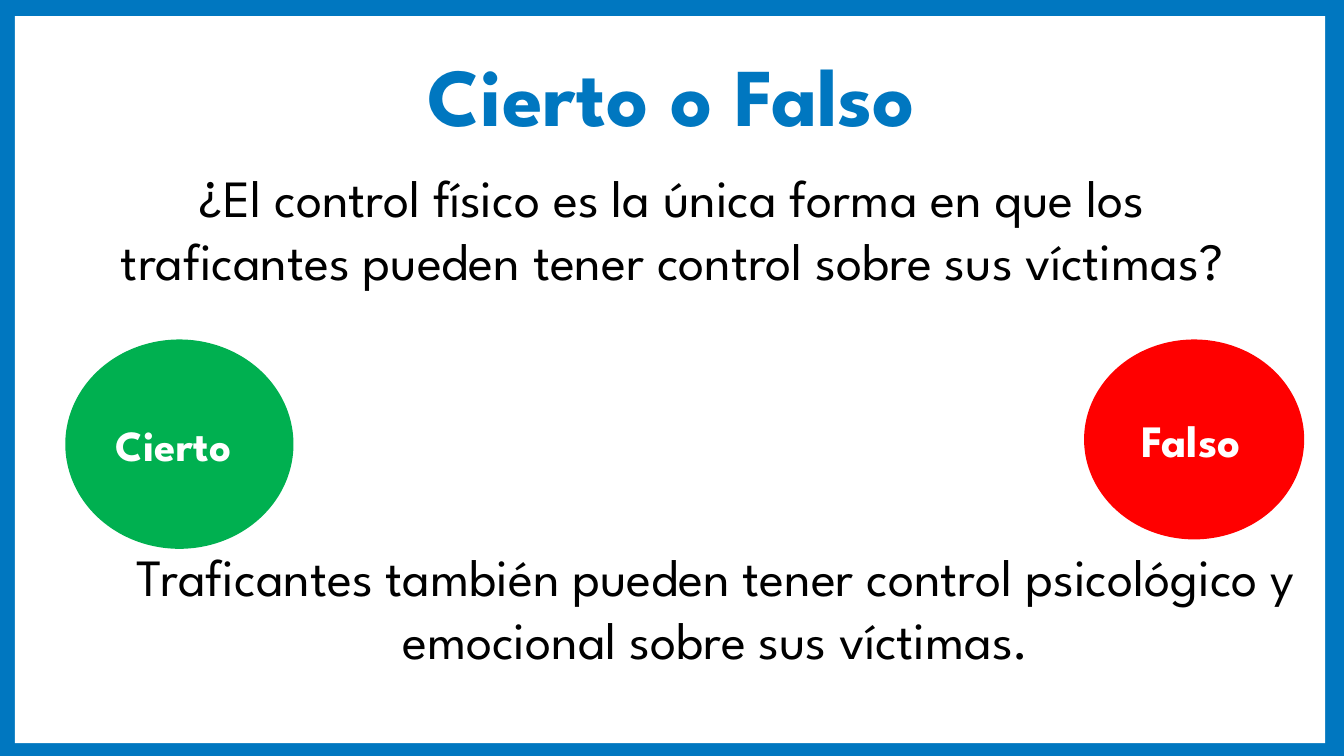
from lxml import etree
from pptx import Presentation
from pptx.dml.color import RGBColor
from pptx.enum.shapes import MSO_SHAPE
from pptx.enum.text import MSO_ANCHOR, PP_ALIGN
from pptx.oxml.ns import qn
from pptx.util import Inches, Pt

RECTANGLE, OVAL = MSO_SHAPE.RECTANGLE, MSO_SHAPE.OVAL
TOP, MIDDLE = MSO_ANCHOR.TOP, MSO_ANCHOR.MIDDLE
CENTER = PP_ALIGN.CENTER
FONT = "League Spartan"
COLORS = {
    "blue": "0077C0",
    "white": "FFFFFF",
    "black": "000000",
    "green": "00B050",
    "red": "FF0000",
}


def color(name):
    return RGBColor.from_string(COLORS[name])


def write(shape, text, size=28, font=FONT, font_color="black", bold=False, anchor=TOP):
    frame = shape.text_frame
    frame.word_wrap = True
    frame.vertical_anchor = anchor
    paragraph = frame.paragraphs[0]
    paragraph.alignment = CENTER
    run = paragraph.add_run()
    run.text = text
    run.font.name = font
    run.font.size = Pt(size)
    run.font.bold = bold
    run.font.color.rgb = color(font_color)


class QuizSlide:
    """Holds the quiz style and the slide being built."""

    def __init__(self, presentation):
        self.slide = presentation.slides.add_slide(presentation.slide_layouts[6])
        background = self.slide.background.fill
        background.solid()
        background.fore_color.rgb = color("blue")

    def shape(self, kind, box, fill, line=None, alpha=None):
        shape = self.slide.shapes.add_shape(kind, *map(Inches, box))
        shape.shadow.inherit = False
        shape.fill.solid()
        shape.fill.fore_color.rgb = color(fill)
        if alpha is not None:
            fill_color = shape.fill._xPr.find(qn("a:solidFill"))[0]
            etree.SubElement(fill_color, qn("a:alpha"), val=str(alpha * 1000))
        if line:
            shape.line.color.rgb = color(line)
            shape.line.width = Pt(2)
        else:
            shape.line.fill.background()
        return shape

    def panel(self, box):
        self.shape(RECTANGLE, box, "white")

    def title(self, text, box):
        shape = self.shape(RECTANGLE, box, "white", alpha=50)
        write(shape, text, size=44, font_color="blue", bold=True, anchor=MIDDLE)

    def text(self, text, box):
        write(self.slide.shapes.add_textbox(*map(Inches, box)), text)

    def answer(self, text, box, fill, size):
        shape = self.shape(OVAL, box, fill, line=fill)
        write(shape, text, size=size, font_color="white", bold=True, anchor=MIDDLE)
        return shape


def main():
    presentation = Presentation()
    presentation.slide_width = Inches(10)
    presentation.slide_height = presentation.slide_width * 9 // 16

    quiz = QuizSlide(presentation)
    quiz.panel((0.11, 0.12, 9.75, 5.41))
    quiz.text(
        "¿El control físico es la única forma en que los traficantes "
        "pueden tener control sobre sus víctimas?",
        (0.5, 1.18, 9, 3.71),
    )
    false_answer = quiz.answer("Falso", (8.08, 2.54, 1.61, 1.46), "red", 24)
    write(false_answer, " ", size=14, font="Calibri", font_color="white", anchor=MIDDLE)
    quiz.title("Cierto o Falso", (0.5, 0.23, 9, 0.94))
    quiz.answer("Cierto ", (0.5, 2.54, 1.67, 1.53), "green", 23)
    quiz.text(
        "Traficantes también pueden tener control psicológico y "
        "emocional sobre sus víctimas.",
        (0.75, 4, 9.15, 1.04),
    )
    presentation.save("out.pptx")


if __name__ == "__main__":
    main()
